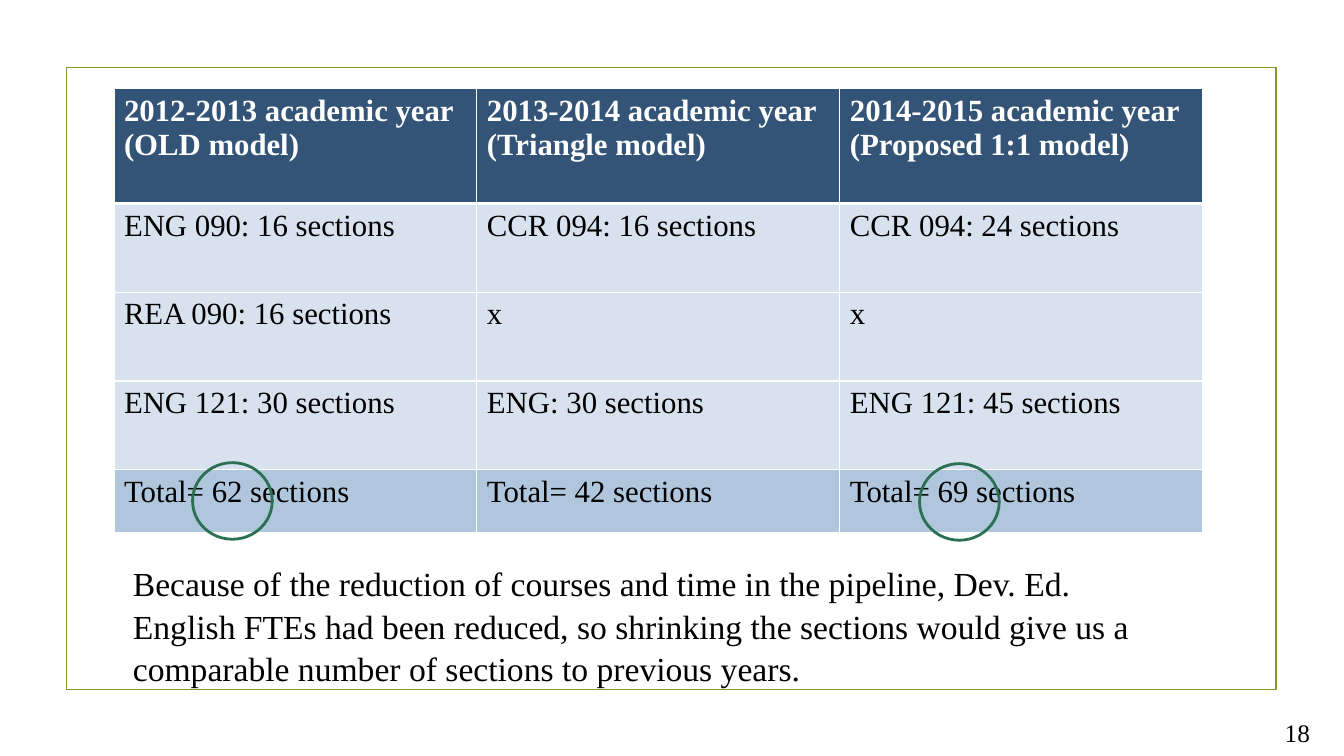
from lxml import etree
from pptx import Presentation
from pptx.dml.color import RGBColor
from pptx.enum.shapes import MSO_SHAPE as Shape
from pptx.enum.text import MSO_ANCHOR as Anchor, PP_ALIGN as Align
from pptx.oxml.ns import qn
from pptx.util import Inches, Pt

# Content
HEAD = [
    ["2012-2013 academic year", "(OLD model)"],
    ["2013-2014 academic year (Triangle model)"],
    ["2014-2015 academic year (Proposed 1:1 model)"],
]
BODY = [
    ["ENG 090: 16 sections", "CCR 094: 16 sections", "CCR 094: 24 sections"],
    ["REA 090: 16 sections", "x", "x"],
    ["ENG 121: 30 sections", "ENG: 30 sections", "ENG 121: 45 sections"],
    ["Total= 62 sections", "Total= 42 sections", "Total= 69 sections"],
]
NOTE = ("Because of the reduction of courses and time in the pipeline, "
        "Dev. Ed. English FTEs had been reduced, so shrinking the sections "
        "would give us a comparable number of sections to previous years.")
PAGE = "18"

# Style
FONT = "Times New Roman"
WHITE, BLACK = "FFFFFF", "000000"
NAVY, PALE, BLUE = "335476", "D7E2EE", "AFC6DD"
OLIVE, GREEN = "83992A", "2C7053"
COL = 3.6
ROWS = [1.14, 0.88, 0.88, 0.88, 0.62]
RINGS = [(1.91, 4.59), (9.12, 4.6)]


def color(code):
    return RGBColor.from_string(code)


def box(*nums):
    return [Inches(n) for n in nums]


def style(para, size, code=BLACK, bold=False):
    font = para.font
    font.name, font.size, font.bold = FONT, Pt(size), bold
    font.color.rgb = color(code)


def outline(slide, kind, place, code, width):
    shape = slide.shapes.add_shape(kind, *box(*place))
    shape.shadow.inherit = False
    shape.fill.background()
    shape.line.color.rgb = color(code)
    shape.line.width = Pt(width)


def label(slide, place, text, size):
    frame = slide.shapes.add_textbox(*box(*place)).text_frame
    frame.word_wrap = True
    frame.text = text
    style(frame.paragraphs[0], size)
    return frame


def border(cell, side, width):
    props = cell._tc.get_or_add_tcPr()
    line = etree.Element(qn("a:ln" + side), w=str(Pt(width)))
    fill = etree.SubElement(line, qn("a:solidFill"))
    etree.SubElement(fill, qn("a:srgbClr"), val=WHITE)
    # Borders go before the fill, in the order L, R, T, B
    props.insert("LRTB".index(side), line)


def add_grid(slide):
    rows = [HEAD] + [[[text] for text in row] for row in BODY]
    fills = [NAVY] + [PALE] * (len(BODY) - 1) + [BLUE]
    place = box(1.13, 0.88, COL * len(HEAD), sum(ROWS))
    table = slide.shapes.add_table(len(rows), len(HEAD), *place).table
    for col in table.columns:
        col.width = Inches(COL)
    for r, row in enumerate(rows):
        table.rows[r].height = Inches(ROWS[r])
        top = r == 0
        for c, lines in enumerate(row):
            cell = table.cell(r, c)
            cell.text = "\n".join(lines)
            for para in cell.text_frame.paragraphs:
                style(para, 22, WHITE if top else BLACK, top)
            cell.fill.solid()
            cell.fill.fore_color.rgb = color(fills[r])
            for side in "LRTB":
                thick = (top and side == "B") or (r == 1 and side == "T")
                border(cell, side, 3 if thick else 1)


def main():
    deck = Presentation()
    deck.slide_width, deck.slide_height = box(13.33, 7.5)
    slide = deck.slides.add_slide(deck.slide_layouts[6])

    # Frame and table
    outline(slide, Shape.RECTANGLE, (0.66, 0.67, 12, 6.17), OLIVE, 1.25)
    add_grid(slide)

    # Note below the table
    note = label(slide, (1.22, 5.52, 10.4, 1.31), NOTE, 24)
    note.paragraphs[0].line_spacing = 1.05

    # Rings around the totals
    for left, top in RINGS:
        outline(slide, Shape.OVAL, (left, top, 0.79, 0.76), GREEN, 2)

    # Page number
    page = label(slide, (12.5, 7.11, 0.59, 0.31), PAGE, 18)
    page.vertical_anchor = Anchor.MIDDLE
    page.paragraphs[0].alignment = Align.RIGHT

    deck.save("out.pptx")


if __name__ == "__main__":
    main()
